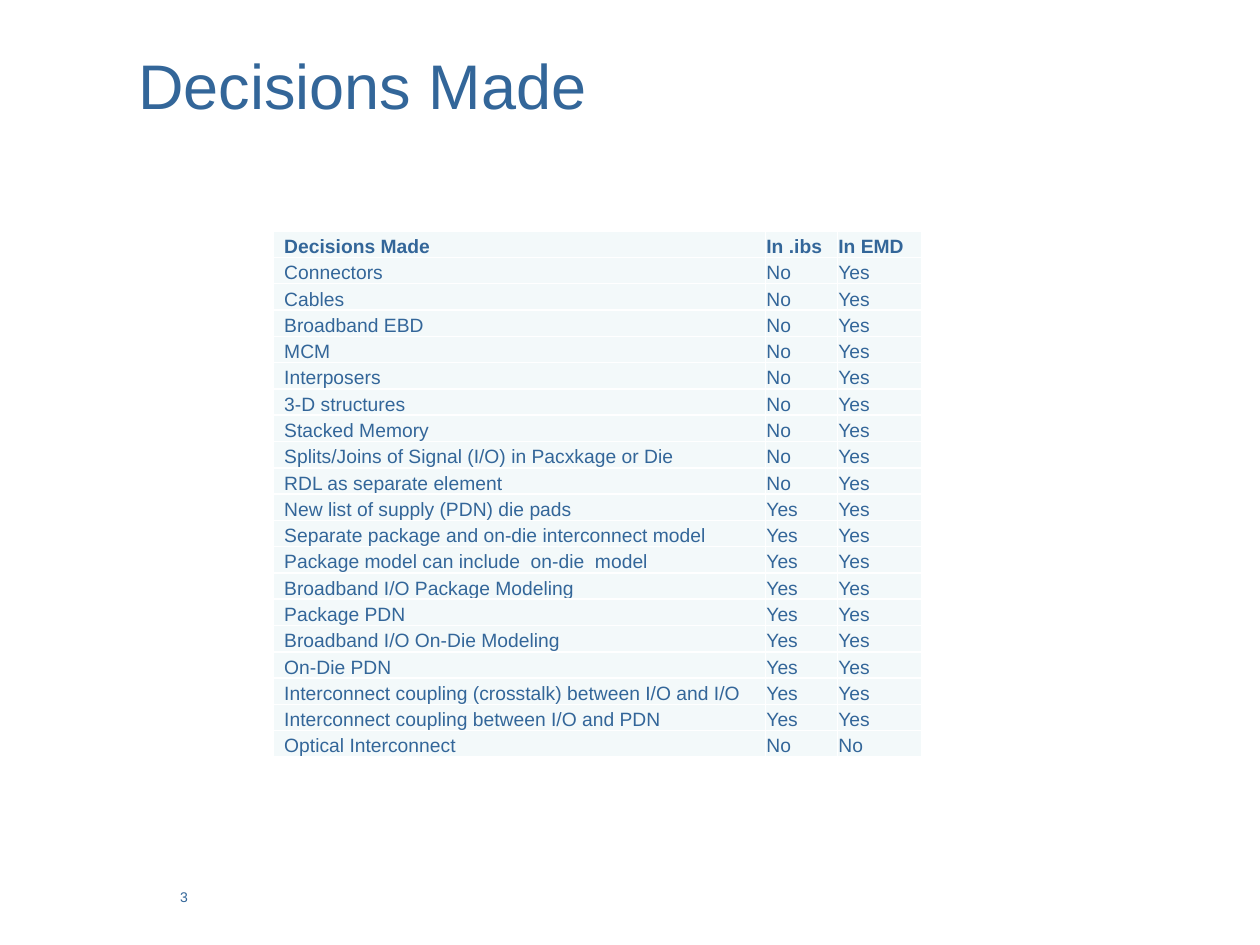
import pptx
import pptx.dml.color
import pptx.enum.text
import pptx.oxml
import pptx.oxml.ns
import pptx.util

Cm = pptx.util.Cm
Pt = pptx.util.Pt
RGBColor = pptx.dml.color.RGBColor
Anchor = pptx.enum.text.MSO_ANCHOR

BLUE = RGBColor(0x33, 0x66, 0x99)
PALE = RGBColor(0xF3, 0xF9, 0xFA)
WHITE = RGBColor(0xFF, 0xFF, 0xFF)

TITLE = "Decisions Made"
PAGE_NUMBER = "3"
HEADER = ("Decisions Made", "In .ibs", "In EMD")
DECISIONS = [
    ("Connectors", "No", "Yes"),
    ("Cables", "No", "Yes"),
    ("Broadband EBD", "No", "Yes"),
    ("MCM", "No", "Yes"),
    ("Interposers", "No", "Yes"),
    ("3-D structures", "No", "Yes"),
    ("Stacked Memory", "No", "Yes"),
    ("Splits/Joins of Signal (I/O) in Pacxkage or Die", "No", "Yes"),
    ("RDL as separate element", "No", "Yes"),
    ("New list of supply (PDN) die pads", "Yes", "Yes"),
    ("Separate package and on-die interconnect model", "Yes", "Yes"),
    ("Package model can include  on-die  model", "Yes", "Yes"),
    ("Broadband I/O Package Modeling", "Yes", "Yes"),
    ("Package PDN", "Yes", "Yes"),
    ("Broadband I/O On-Die Modeling", "Yes", "Yes"),
    ("On-Die PDN", "Yes", "Yes"),
    ("Interconnect coupling (crosstalk) between I/O and I/O", "Yes", "Yes"),
    ("Interconnect coupling between I/O and PDN", "Yes", "Yes"),
    ("Optical Interconnect", "No", "No"),
]
COLUMN_WIDTHS = (9.92, 1.45, 1.7)
ROW_HEIGHT = 0.53


def write(frame, text, size, bold=False):
    paragraph = frame.paragraphs[0]
    paragraph.text = text
    paragraph.font.name = "Arial"
    paragraph.font.size = Pt(size)
    paragraph.font.bold = bold
    paragraph.font.color.rgb = BLUE


def add_text(slide, text, size, left, top, width, height, anchor):
    frame = slide.shapes.add_textbox(Cm(left), Cm(top), Cm(width), Cm(height)).text_frame
    frame.word_wrap = True
    frame.vertical_anchor = anchor
    write(frame, text, size)


def add_borders(cell):
    properties = cell._tc.get_or_add_tcPr()
    for side in ("lnL", "lnR", "lnT", "lnB"):
        properties.append(pptx.oxml.parse_xml(
            f'<a:{side} {pptx.oxml.ns.nsdecls("a")} w="{Pt(1)}"><a:solidFill>'
            f'<a:srgbClr val="{WHITE}"/></a:solidFill></a:{side}>'))


def add_decisions(slide):
    rows = [HEADER] + DECISIONS
    table = slide.shapes.add_table(
        len(rows), len(HEADER), Cm(5.51), Cm(4.66),
        Cm(sum(COLUMN_WIDTHS)), Cm(ROW_HEIGHT * len(rows))).table
    table.horz_banding = False
    for column, width in zip(table.columns, COLUMN_WIDTHS):
        column.width = Cm(width)
    for r, row in enumerate(rows):
        table.rows[r].height = Cm(ROW_HEIGHT)
        for c, text in enumerate(row):
            cell = table.cell(r, c)
            add_borders(cell)
            cell.fill.solid()
            cell.fill.fore_color.rgb = PALE
            cell.vertical_anchor = Anchor.BOTTOM
            cell.margin_left = Cm(0.22 if c == 0 else 0.02)
            cell.margin_right = cell.margin_top = Cm(0.02)
            cell.margin_bottom = 0
            write(cell.text_frame, text, 11, bold=r == 0)


def main():
    deck = pptx.Presentation()
    deck.slide_width, deck.slide_height = Cm(25.4), Cm(19.05)
    slide = deck.slides.add_slide(deck.slide_layouts[6])
    add_text(slide, TITLE, 36, 2.54, 0.43, 19.48, 2.54, Anchor.MIDDLE)
    add_text(slide, PAGE_NUMBER, 8, 3.38, 17.78, 13.13, 0.89, Anchor.TOP)
    add_decisions(slide)
    deck.save("out.pptx")


if __name__ == "__main__":
    main()
